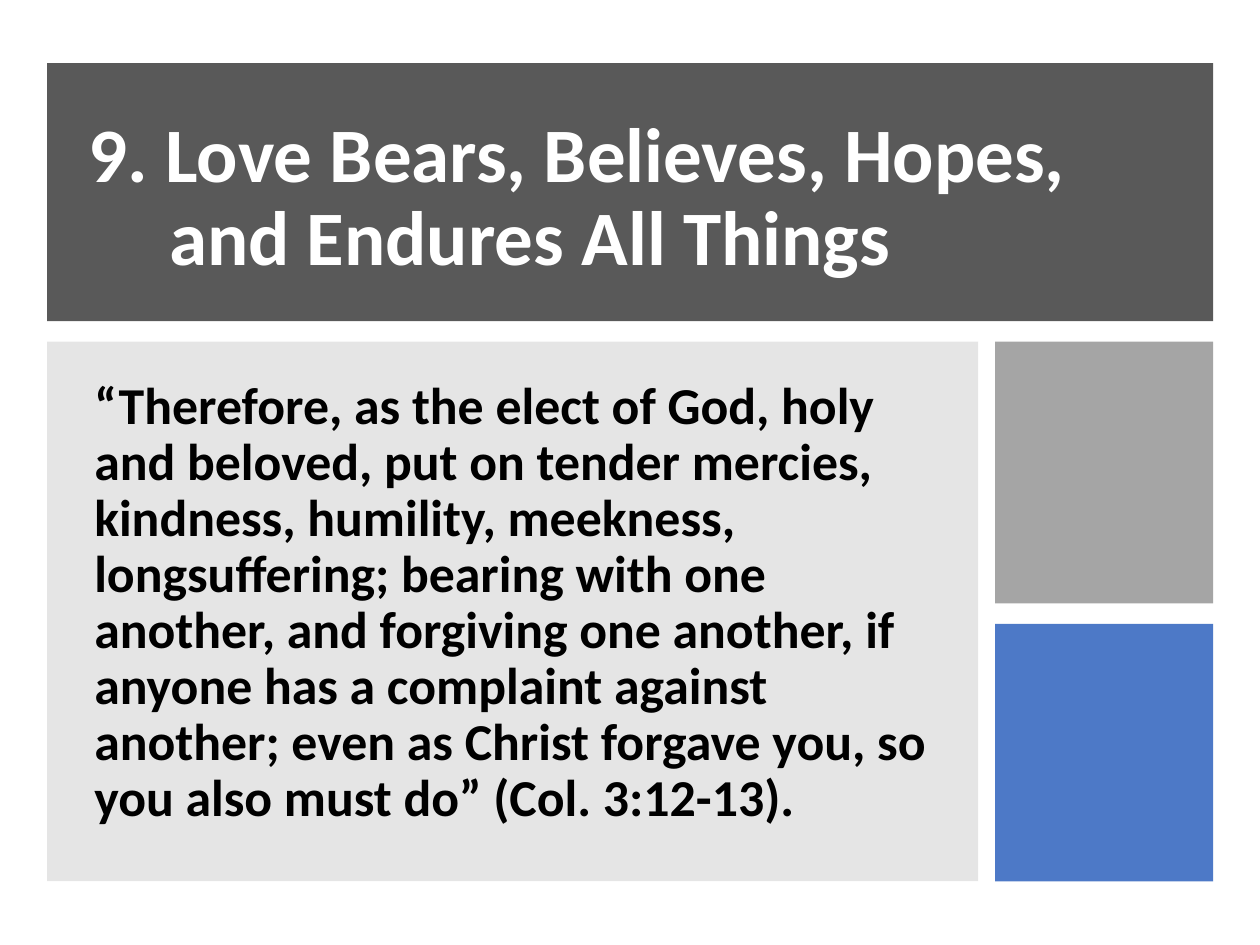
from dataclasses import dataclass

from lxml.etree import SubElement
from pptx import Presentation
from pptx.dml.color import RGBColor
from pptx.enum.shapes import MSO_SHAPE
from pptx.enum.text import MSO_ANCHOR, PP_ALIGN
from pptx.oxml.ns import qn
from pptx.slide import Slide
from pptx.util import Pt


@dataclass
class Panel:
    left: float
    top: float
    width: float
    height: float
    color: str
    opacity: int = 100  # percent


@dataclass
class TextBlock:
    left: float
    top: float
    width: float
    height: float
    text: str
    size: float
    color: str
    hanging: float = 0


def rgb(value: str) -> RGBColor:
    return RGBColor.from_string(value)


def add_panel(s: Slide, panel: Panel) -> None:
    sp = s.shapes.add_shape(MSO_SHAPE.RECTANGLE, Pt(panel.left), Pt(panel.top),
                            Pt(panel.width), Pt(panel.height))
    sp.shadow.inherit = False
    sp.line.fill.background()
    sp.fill.solid()
    sp.fill.fore_color.rgb = rgb(panel.color)
    if panel.opacity < 100:
        color = sp.fill._xPr.find(qn("a:solidFill"))[0]
        SubElement(color, qn("a:alpha"), val=str(panel.opacity * 1000))


def add_text(s: Slide, block: TextBlock) -> None:
    sp = s.shapes.add_textbox(Pt(block.left), Pt(block.top),
                              Pt(block.width), Pt(block.height))
    tf = sp.text_frame
    tf.word_wrap = True
    tf.vertical_anchor = MSO_ANCHOR.MIDDLE
    p = tf.paragraphs[0]
    p.text = block.text
    p.alignment = PP_ALIGN.LEFT
    p.line_spacing = 0.9
    if block.hanging:
        pPr = p._p.get_or_add_pPr()
        pPr.set("marL", str(Pt(block.hanging)))
        pPr.set("indent", str(-Pt(block.hanging)))
    p.font.name = "Calibri"
    p.font.size = Pt(block.size)
    p.font.bold = True
    p.font.color.rgb = rgb(block.color)


# Frame shared by the panels
LEFT, RIGHT = 27, 693.3
BODY_TOP, BODY_BOTTOM = 195.3, 503.6
SIDE_LEFT = 568.6
SIDE_WIDTH = RIGHT - SIDE_LEFT

PANELS = [
    Panel(LEFT, 36, RIGHT - LEFT, 147.5, "595959"),
    Panel(LEFT, BODY_TOP, 532, BODY_BOTTOM - BODY_TOP, "808080", 20),
    Panel(SIDE_LEFT, BODY_TOP, SIDE_WIDTH, 149.5, "A5A5A5"),
    Panel(SIDE_LEFT, 356.5, SIDE_WIDTH, BODY_BOTTOM - 356.5, "4472C4", 95),
]

TITLE = TextBlock(43.5, 57.6, 630, 112.3,
                  "9. Love Bears, Believes, Hopes, and Endures All Things",
                  44, "FFFFFF", hanging=46)
VERSE = TextBlock(
    46.8, 203.8, 494.6, 282.2,
    "“Therefore, as the elect of God, holy and beloved, put on tender mercies, "
    "kindness, humility, meekness, longsuffering; bearing with one another, and "
    "forgiving one another, if anyone has a complaint against another; even as "
    "Christ forgave you, so you also must do” (Col. 3:12-13).",
    29.6, "000000")


def main() -> None:
    prs = Presentation()
    prs.slide_width, prs.slide_height = Pt(720), Pt(540)
    s = prs.slides.add_slide(prs.slide_layouts[6])

    # Coloured panels
    for panel in PANELS:
        add_panel(s, panel)

    # Title and verse
    for block in (TITLE, VERSE):
        add_text(s, block)

    prs.save("out.pptx")


if __name__ == "__main__":
    main()
